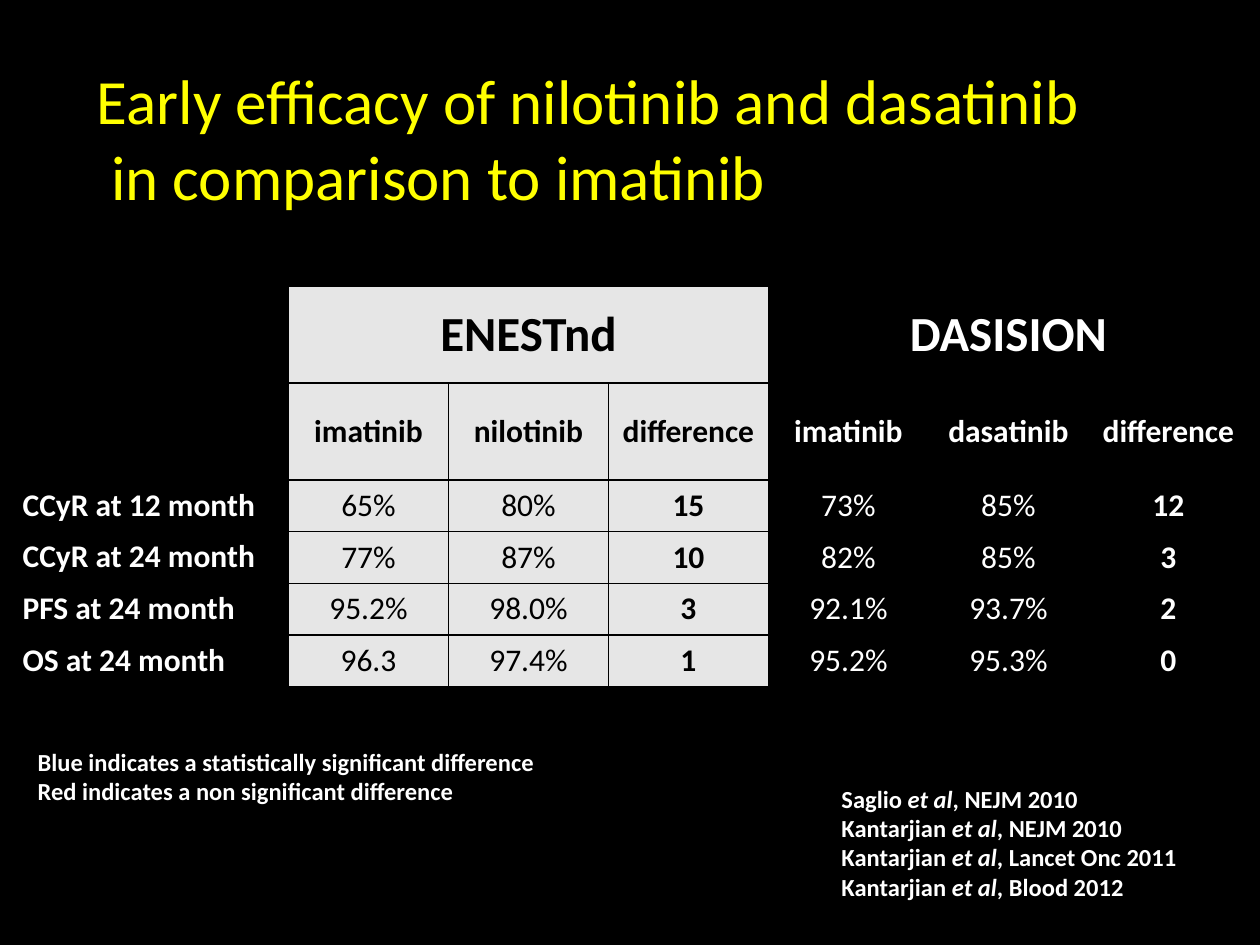
from dataclasses import dataclass

from lxml.etree import SubElement
from pptx import Presentation
from pptx.dml.color import RGBColor
from pptx.enum.text import MSO_ANCHOR, MSO_AUTO_SIZE, PP_ALIGN
from pptx.oxml.ns import qn
from pptx.util import Inches, Pt


@dataclass(frozen=True)
class Theme:
    font: str = "Calibri"
    black: RGBColor = RGBColor(0, 0, 0)
    white: RGBColor = RGBColor(255, 255, 255)
    yellow: RGBColor = RGBColor(255, 255, 0)
    panel: RGBColor = RGBColor(0xE6, 0xE6, 0xE6)
    title: int = 36
    trial: int = 28
    table: int = 18
    note: int = 14


theme = Theme()


def write(frame, lines, size, color, bold=False, align=PP_ALIGN.LEFT):
    """Fill a text frame with one paragraph per line, setting "et al" in italics."""
    for number, line in enumerate(lines):
        paragraph = frame.add_paragraph() if number else frame.paragraphs[0]
        paragraph.alignment = align
        for part in filter(None, line.partition("et al")):
            run = paragraph.add_run()
            run.text = part
            run.font.name = theme.font
            run.font.size = Pt(size)
            run.font.bold = bold
            run.font.italic = part == "et al"
            run.font.color.rgb = color


def add_borders(cell, color, width):
    properties = cell._tc.get_or_add_tcPr()
    for side in ("lnL", "lnR", "lnT", "lnB"):
        line = SubElement(properties, qn(f"a:{side}"), w=str(Pt(width)))
        fill = SubElement(line, qn("a:solidFill"))
        SubElement(fill, qn("a:srgbClr"), val=str(color))


prs = Presentation()
prs.slide_width, prs.slide_height = Inches(10), Inches(7.5)
slide = prs.slides.add_slide(prs.slide_layouts[6])
slide.background.fill.solid()
slide.background.fill.fore_color.rgb = theme.black

# Efficacy table: outcome labels, then three columns per trial
rows = [
    ["", "ENESTnd", "", "", "DASISION", "", ""],
    ["", "imatinib", "nilotinib", "difference", "imatinib", "dasatinib", "difference"],
    ["CCyR at 12 month", "65%", "80%", "15", "73%", "85%", "12"],
    ["CCyR at 24 month", "77%", "87%", "10", "82%", "85%", "3"],
    ["PFS at 24 month", "95.2%", "98.0%", "3", "92.1%", "93.7%", "2"],
    ["OS at 24 month", "96.3", "97.4%", "1", "95.2%", "95.3%", "0"],
]
column_widths = [2.21] + [1.27] * 6
row_heights = [0.77] * 2 + [0.41] * 4
header_rows = 2
enestnd_columns = range(1, 4)
bold_columns = (0, 3, 6)

efficacy = slide.shapes.add_table(
    len(rows), len(column_widths), Inches(0.08), Inches(2.27),
    Inches(sum(column_widths)), Inches(sum(row_heights))).table
efficacy.first_row = efficacy.horz_banding = False
for column, width in zip(efficacy.columns, column_widths):
    column.width = Inches(width)
for row, height in zip(efficacy.rows, row_heights):
    row.height = Inches(height)
for first in (1, 4):
    efficacy.cell(0, first).merge(efficacy.cell(0, first + 2))

for r, values in enumerate(rows):
    for c, value in enumerate(values):
        cell = efficacy.cell(r, c)
        in_enestnd = c in enestnd_columns
        add_borders(cell, theme.black, 1)
        if in_enestnd:
            cell.fill.solid()
            cell.fill.fore_color.rgb = theme.panel
        else:
            cell.fill.background()
        cell.vertical_anchor = MSO_ANCHOR.MIDDLE if c else MSO_ANCHOR.TOP
        write(cell.text_frame, [value],
              size=theme.table if r else theme.trial,
              color=theme.black if in_enestnd else theme.white,
              bold=r < header_rows or c in bold_columns,
              align=PP_ALIGN.CENTER if c else PP_ALIGN.LEFT)

# Legend, title and references
text_blocks = [
    ((0.2, 5.88, 4.18, 0.57), theme.note, theme.white, True,
     ["Blue indicates a statistically significant difference",
      "Red indicates a non significant difference"]),
    ((0.67, 0.44, 8.32, 1.31), theme.title, theme.yellow, False,
     ["Early efficacy of nilotinib and dasatinib",
      " in comparison to imatinib"]),
    ((6.58, 6.17, 2.88, 1.04), theme.note, theme.white, True,
     ["Saglio et al, NEJM 2010",
      "Kantarjian et al, NEJM 2010",
      "Kantarjian et al, Lancet Onc 2011",
      "Kantarjian et al, Blood 2012"]),
]
for place, size, color, bold, lines in text_blocks:
    frame = slide.shapes.add_textbox(*map(Inches, place)).text_frame
    frame.word_wrap = False
    frame.auto_size = MSO_AUTO_SIZE.SHAPE_TO_FIT_TEXT
    write(frame, lines, size=size, color=color, bold=bold)

prs.save("out.pptx")
